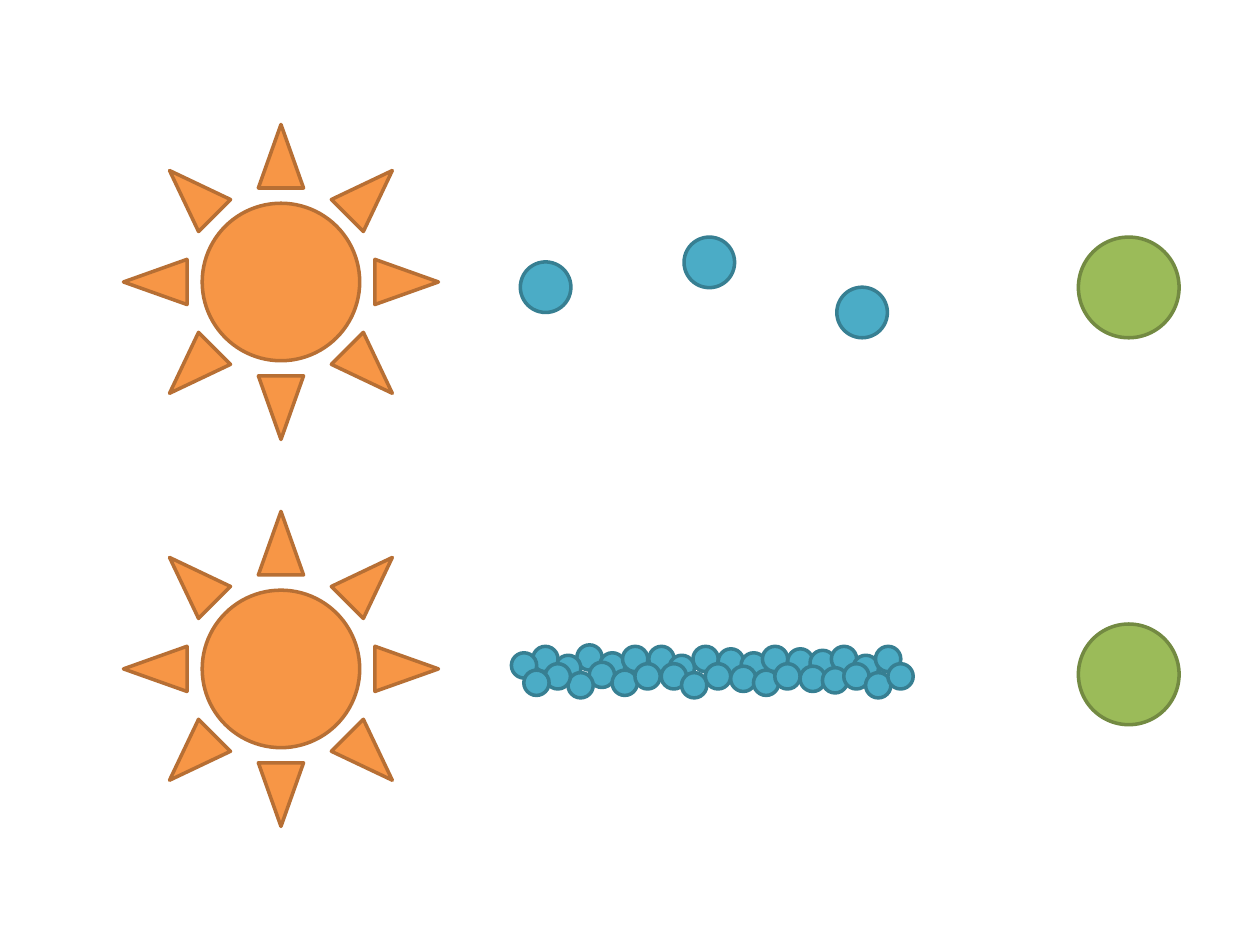
from dataclasses import dataclass

from pptx import Presentation
from pptx import util as u
from pptx.dml.color import RGBColor
from pptx.enum import shapes


@dataclass(frozen=True)
class Theme:
    """Fill and line colours of each kind of body, and the line width."""
    sun: tuple = ("F79646", "B76F34")
    photon: tuple = ("4BACC6", "377F92")
    planet: tuple = ("9BBB59", "738A42")
    line_width: float = 2


class Scene:
    """Holds the theme, the current slide and the group being filled."""

    def __init__(self, slide, theme):
        self.slide = slide
        self.theme = theme
        self.group = None

    def start_group(self):
        self.group = self.slide.shapes.add_group_shape()

    def body(self, kind, left, top, size, colours):
        """Add a square-framed preset shape; lengths are in centimetres."""
        fill, line = (RGBColor.from_string(colour) for colour in colours)
        shape = self.group.shapes.add_shape(
            kind, u.Cm(left), u.Cm(top), u.Cm(size), u.Cm(size))
        shape.shadow.inherit = False
        shape.fill.solid()
        shape.fill.fore_color.rgb = fill
        shape.line.color.rgb = line
        shape.line.width = u.Pt(self.theme.line_width)

    def sun(self, left, top):
        self.body(shapes.MSO_SHAPE.SUN, left, top, 6.35, self.theme.sun)

    def planet(self, left, top):
        self.body(shapes.MSO_SHAPE.OVAL, left, top, 2.03, self.theme.planet)

    def photons(self, places, size):
        for left, top in places:
            self.body(shapes.MSO_SHAPE.OVAL, left, top, size,
                      self.theme.photon)


ROW_GAP = 7.8
BEAM_SHIFT = (0.25, 0.35)
SPARSE_PHOTONS = [(10.49, 5.28), (13.79, 4.78), (16.87, 5.79)]
BEAM_PHOTONS = [
    (11.63, 13.0), (12.09, 13.16), (12.55, 13.03), (13.08, 13.03),
    (13.49, 13.21), (13.97, 13.03), (14.48, 13.08), (14.94, 13.16),
    (15.37, 13.03), (15.88, 13.08), (16.33, 13.11), (16.76, 13.03),
    (17.2, 13.21), (11.2, 13.21), (10.74, 13.03), (10.31, 13.16),
    (17.65, 13.03),
]


def main():
    deck = Presentation()
    format_values = {"slide_width": u.Cm(25.4), "slide_height": u.Cm(19.05)}
    for name, value in format_values.items():
        setattr(deck, name, value)

    scene = Scene(deck.slides.add_slide(deck.slide_layouts[6]), Theme())
    shift_x, shift_y = BEAM_SHIFT
    lower_beam = [(x + shift_x, y + shift_y) for x, y in BEAM_PHOTONS]
    rows = [(SPARSE_PHOTONS, 1.02), (BEAM_PHOTONS + lower_beam, 0.51)]
    for row, (places, size) in enumerate(rows):
        scene.start_group()
        scene.sun(2.49, 2.51 + row * ROW_GAP)
        scene.planet(21.74, 4.78 + row * ROW_GAP)
        scene.photons(places, size)

    deck.save("out.pptx")


if __name__ == "__main__":
    main()
